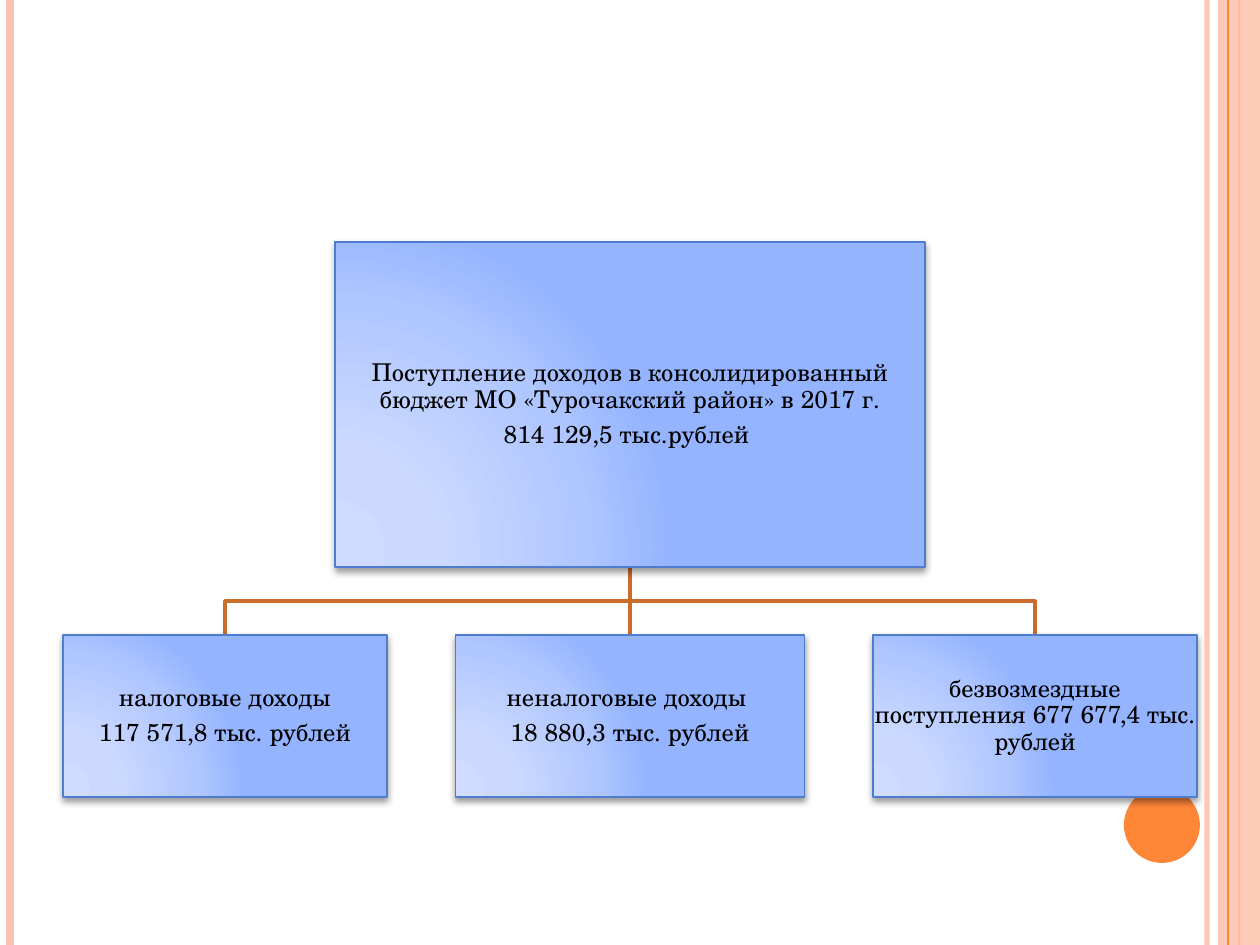
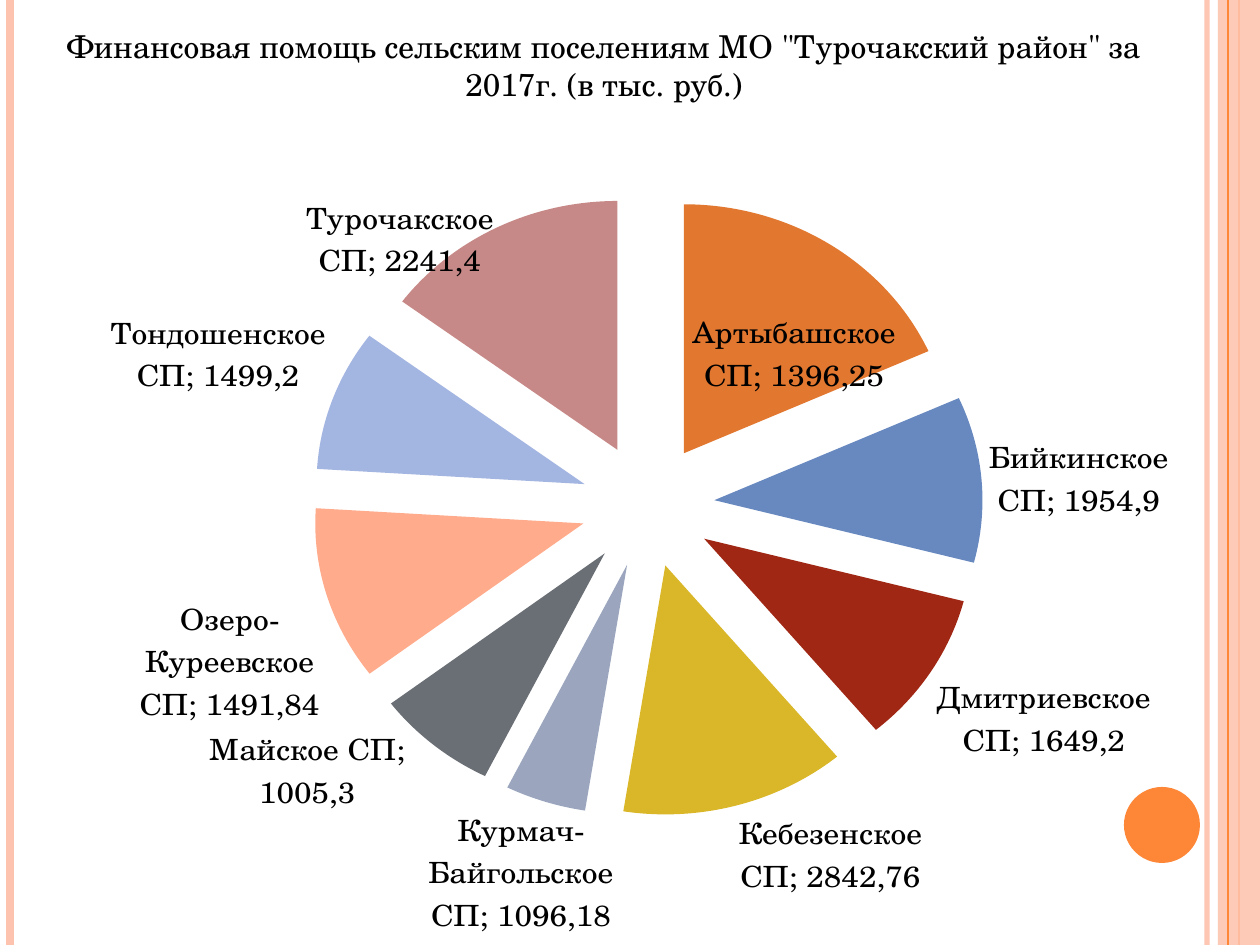
import pptx
import pptx.util
import pptx.oxml
import pptx.oxml.ns
import pptx.dml.color
import pptx.chart.data
import pptx.enum.chart
import pptx.enum.shapes
import pptx.enum.text
import lxml.etree as etree

SCALE = 914400 / 126  # EMU in one px
WIDE, HIGH = 1260, 945
FONT = "TeX Gyre Schola"
INK, PEACH, ORANGE = "000000", "FEC3AE", "FE8637"
EDGE, LINK = "4F7CCF", "CB6B2C"
STOPS = [(0, "CFDCFF"), (30, "CBD9FF"), (75, "AFC6FF"), (100, "95B4FF")]
NS = 'xmlns:a="http://schemas.openxmlformats.org/drawingml/2006/main"'
KIND = pptx.enum.shapes.MSO_SHAPE
MID = pptx.enum.text.PP_ALIGN.CENTER

# Village, pie value, label value, colour
AID = [
    ("Артыбашское СП", 2748, "1396,25", "E27830"),
    ("Бийкинское СП", 1619, "1954,9", "6888C0"),
    ("Дмитриевское СП", 1488, "1649,2", "9F2713"),
    ("Кебезенское СП", 2042, "2842,76", "DAB728"),
    ("Курмач-Байгольское СП", 731, "1096,18", "9BA6BE"),
    ("Майское СП", 1101, "1005,3", "6A6F75"),
    ("Озеро-Куреевское СП", 1697, "1491,84", "FFAB8C"),
    ("Тондошенское СП", 1382, "1499,2", "A3B5E1"),
    ("Турочакское СП", 2231, "2241,4", "C78987"),
]
# Label shifts, as shares of the chart size
SHIFTS = {0: (-0.12, 0.21), 4: (0.06, 0), 5: (-0.02, -0.03), 8: (0, 0.08)}


def px(*nums):
    return [pptx.util.Emu(round(n * SCALE)) for n in nums]


def rgb(code):
    return pptx.dml.color.RGBColor.from_string(code)


def fade(color, alpha):
    """Make a solid colour partly clear."""
    tag = color._xFill.find(".//" + pptx.oxml.ns.qn("a:srgbClr"))
    etree.SubElement(tag, pptx.oxml.ns.qn("a:alpha"), val=str(alpha * 1000))


def style(font, size, color=INK):
    font.name, font.size = FONT, pptx.util.Pt(size)
    font.color.rgb = rgb(color)


def write(frame, text, size=14, space=None, after=0, inset=None):
    """Fill a text frame with centred paragraphs, one a line."""
    frame.word_wrap = True
    if inset is not None:
        frame.margin_left, frame.margin_top, frame.margin_right, frame.margin_bottom = px(*[inset] * 4)
    for i, line in enumerate(text.split("\n")):
        para = frame.add_paragraph() if i else frame.paragraphs[0]
        para.alignment = MID
        para.space_after = pptx.util.Pt(after)
        if space:
            para.line_spacing = space
        run = para.add_run()
        run.text = line
        style(run.font, size)


def rule(slide, x, color, width):
    """Draw a line from top to foot of the slide."""
    line = slide.shapes.add_connector(pptx.enum.shapes.MSO_CONNECTOR.STRAIGHT, *px(x, 0, x, HIGH))
    line.line.color.rgb = rgb(color)
    line.line.width = pptx.util.Pt(width)
    etree.SubElement(line._element.spPr, pptx.oxml.ns.qn("a:effectLst"))
    return line


def plain(slide, kind, box, color):
    form = slide.shapes.add_shape(kind, *px(*box))
    form.shadow.inherit = False
    form.fill.solid()
    form.fill.fore_color.rgb = rgb(color)
    form.line.fill.background()
    return form


def frame(deck):
    """Add a slide with the side bands and the disc."""
    slide = deck.slides.add_slide(deck.slide_layouts[6])
    slide.background.fill.solid()
    slide.background.fill.fore_color.rgb = rgb("FFFFFF")
    fade(rule(slide, 1207, PEACH, 3).line.color, 93)
    rule(slide, 10, PEACH, 4.5)
    rule(slide, 1239, ORANGE, 1.5)
    band = plain(slide, KIND.RECTANGLE, (1218, 0, 42, HIGH), PEACH)
    fade(band.fill.fore_color, 87)
    rule(slide, 1228, ORANGE, 0.75)
    plain(slide, KIND.OVAL, (1124, 787, 76, 76), ORANGE)
    return slide


def card(slide, box, text):
    """Draw a shaded box with its text."""
    form = plain(slide, KIND.RECTANGLE, box, STOPS[-1][1])
    stops = "".join(f'<a:gs pos="{at * 1000}"><a:srgbClr val="{c}"/></a:gs>' for at, c in STOPS)
    grad = pptx.oxml.parse_xml(
        f'<a:gradFill {NS}><a:gsLst>{stops}</a:gsLst><a:path path="circle">'
        '<a:fillToRect l="5000" t="100000" r="120000" b="10000"/></a:path></a:gradFill>')
    props = form._element.spPr
    props.replace(props.find(pptx.oxml.ns.qn("a:solidFill")), grad)
    shade = pptx.oxml.parse_xml(
        f'<a:outerShdw {NS} blurRad="50800" dist="25400" dir="5400000" rotWithShape="0">'
        '<a:srgbClr val="000000"><a:alpha val="40000"/></a:srgbClr></a:outerShdw>')
    props.find(pptx.oxml.ns.qn("a:effectLst")).append(shade)
    form.line.color.rgb = rgb(EDGE)
    form.line.width = pptx.util.Pt(1)
    form.text_frame.vertical_anchor = pptx.enum.text.MSO_ANCHOR.MIDDLE
    write(form.text_frame, text, space=0.9, after=4.9, inset=1)


def link(slide, x, top, to, end):
    """Draw a link from parent to child, bent half way down."""
    half = (top + end) / 2
    pen = slide.shapes.build_freeform(*px(x, top))
    turns = [(to, end)] if to == x else [(x, half), (to, half), (to, end)]
    pen.add_line_segments([px(*turn) for turn in turns], close=False)
    form = pen.convert_to_shape()
    form.shadow.inherit = False
    form.fill.background()
    form.line.color.rgb = rgb(LINK)
    form.line.width = pptx.util.Pt(2)


def tree(slide):
    """Income chart: one total, three sources."""
    mid, foot, head = WIDE // 2, 567, 635
    kids = [
        (225, 324, "налоговые доходы\n117 571,8 тыс. рублей"),
        (630, 349, "неналоговые доходы \n18 880,3 тыс. рублей"),
        (1035, 324, "безвозмездные поступления 677 677,4 тыс. рублей"),
    ]
    for x, _, _ in reversed(kids):
        link(slide, mid, foot, x, head)
    card(slide, (335, 242, 590, 325),
         "Поступление доходов в консолидированный бюджет МО «Турочакский район» в 2017 г.\n"
         "814 129,5 тыс.рублей ")
    for x, width, text in kids:
        card(slide, (x - width / 2, head, width, 162), text)


def place(tag, x, y, w=None, h=None):
    """Give a chart part a manual layout."""
    def add(node, name, **attrs):
        return etree.SubElement(node, pptx.oxml.ns.qn("c:" + name), **attrs)
    lay = tag.find(pptx.oxml.ns.qn("c:layout"))
    if lay is None:
        lay = add(tag, "layout")
        tag.remove(lay)
        tag.insert(0 if w else 1, lay)
    man = add(lay, "manualLayout")
    if w:
        add(man, "layoutTarget", val="inner")
        add(man, "xMode", val="edge")
        add(man, "yMode", val="edge")
    for name, val in zip("xywh", (x, y, w, h)):
        if val is not None:
            add(man, name, val=str(val))


def pie(slide, box):
    """Exploded pie with a label for each village."""
    data = pptx.chart.data.CategoryChartData()
    data.categories = [row[0] for row in AID]
    data.add_series("Series 1", [row[1] for row in AID])
    types = pptx.enum.chart
    chart = slide.shapes.add_chart(types.XL_CHART_TYPE.PIE, *px(*box), data).chart
    chart.has_legend = chart.has_title = False
    style(chart.font, 18)
    place(chart._chartSpace.chart.plotArea, 0.23, 0, 0.57, 0.83)
    plot = chart.plots[0]
    plot.vary_by_categories = True
    series = plot.series[0]
    burst = pptx.oxml.parse_xml(
        '<c:explosion xmlns:c="http://schemas.openxmlformats.org/drawingml/2006/chart" val="25"/>')
    series._element.find(pptx.oxml.ns.qn("c:tx")).addnext(burst)
    for i, (name, _, shown, color) in enumerate(AID):
        point = series.points[i]
        point.format.fill.solid()
        point.format.fill.fore_color.rgb = rgb(color)
        point.format.line.fill.background()
        label = point.data_label
        run = label.text_frame.paragraphs[0].add_run()
        run.text = f"{name}; {shown}"
        style(run.font, 18)
        label.position = types.XL_LABEL_POSITION.OUTSIDE_END
        if i in SHIFTS:
            place(label._dLbl, *SHIFTS[i])
    # Labels show value and name, with no leader lines
    series.data_labels.show_value = True
    series.data_labels.show_category_name = True
    for lead in series._element.iter(pptx.oxml.ns.qn("c:showLeaderLines")):
        lead.set("val", "0")


def main():
    deck = pptx.Presentation()
    deck.slide_width, deck.slide_height = px(WIDE, HIGH)
    # Income
    tree(frame(deck))
    # Aid to villages
    slide = frame(deck)
    pie(slide, (42, 136, 1176, 809))
    title = slide.shapes.add_textbox(*px(53, 21, 1102, 127))
    write(title.text_frame,
          'Финансовая помощь сельским поселениям МО "Турочакский район" за 2017г. (в тыс. руб.)', size=18)
    deck.save("out.pptx")


if __name__ == "__main__":
    main()
